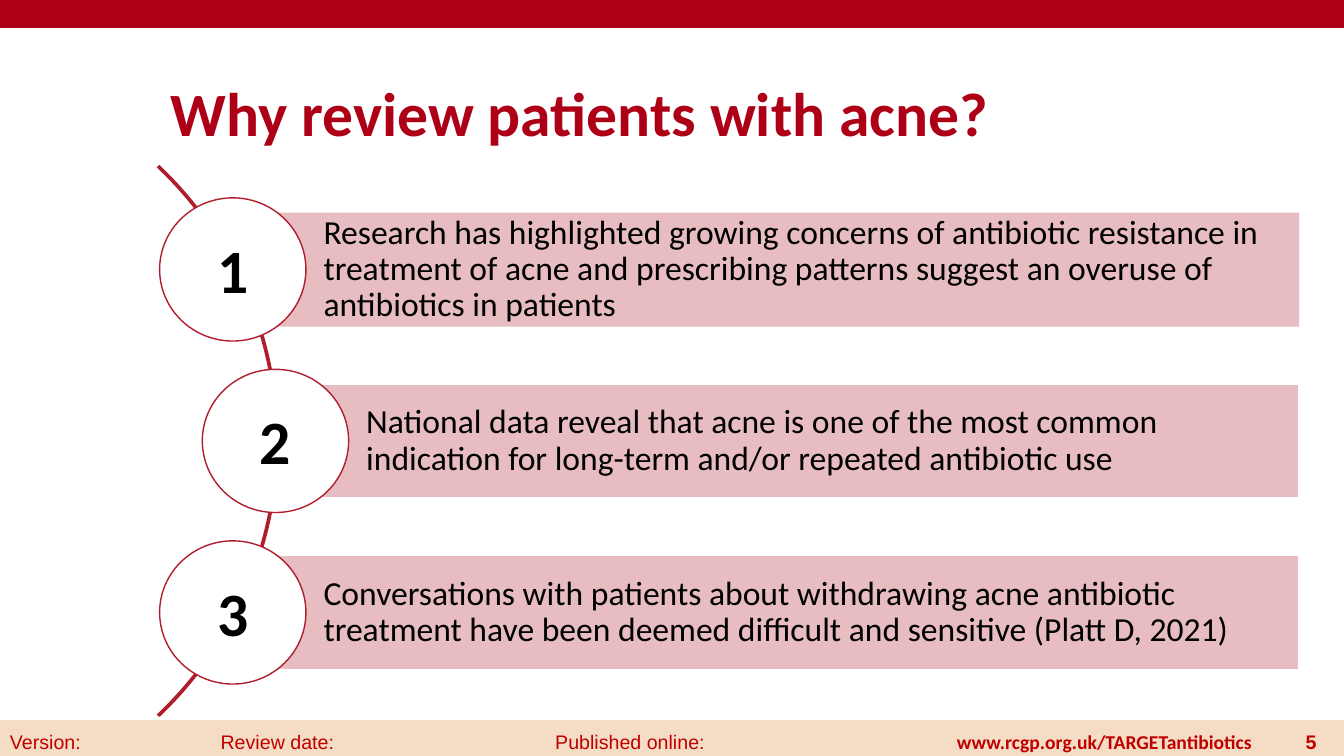
from lxml.etree import SubElement
from pptx import Presentation
from pptx.dml.color import RGBColor
from pptx.enum.shapes import MSO_SHAPE
from pptx.enum.text import MSO_ANCHOR, PP_ALIGN
from pptx.oxml.ns import qn
from pptx.util import Pt

COLOURS = {
    "title": "AD0016",
    "accent": "AF1E2C",
    "footer_band": "F4DDC4",
    "footer_text": "C00000",
    "white": "FFFFFF",
    "black": "000000",
}

REASONS = [
    "Research has highlighted growing concerns of antibiotic resistance in treatment of acne "
    "and prescribing patterns suggest an overuse of antibiotics in patients",
    "National data reveal that acne is one of the most common indication for long-term "
    "and/or repeated antibiotic use",
    "Conversations with patients about withdrawing acne antibiotic treatment have been "
    "deemed difficult and sensitive (Platt D, 2021)",
]


def colour(name):
    return RGBColor.from_string(COLOURS[name])


def write(shape, text, size=14, font="Calibri", color="black", bold=False,
          align=PP_ALIGN.LEFT, anchor=MSO_ANCHOR.TOP, spacing=1.0,
          insets=(7.2, 3.6, 7.2, 3.6)):
    frame = shape.text_frame
    frame.word_wrap = True
    frame.vertical_anchor = anchor
    (frame.margin_left, frame.margin_top,
     frame.margin_right, frame.margin_bottom) = map(Pt, insets)
    paragraph = frame.paragraphs[0]
    paragraph.alignment = align
    paragraph.line_spacing = spacing
    paragraph.space_before = Pt(0)
    run = paragraph.add_run()
    run.text = text
    run.font.size = Pt(size)
    run.font.name = font
    run.font.bold = bold
    run.font.color.rgb = colour(color)


class AcneSlide:
    """Holds the style and the current slide."""

    def __init__(self, presentation):
        self.slide = presentation.slides.add_slide(presentation.slide_layouts[5])

    def title(self, text, box):
        shape = self.slide.shapes.title
        shape.left, shape.top, shape.width, shape.height = map(Pt, box)
        write(shape, text, size=44, color="title", bold=True,
              anchor=MSO_ANCHOR.BOTTOM, spacing=0.9)

    def shape(self, kind, box, fill, line=None, alpha=None):
        shape = self.slide.shapes.add_shape(kind, *map(Pt, box))
        shape.shadow.inherit = False
        shape.fill.solid()
        shape.fill.fore_color.rgb = colour(fill)
        if alpha is not None:
            color_element = shape._element.spPr.find(qn("a:solidFill"))[0]
            SubElement(color_element, qn("a:alpha"), val=str(alpha * 1000))
        if line:
            shape.line.color.rgb = colour(line)
            shape.line.width = Pt(1)
        else:
            shape.line.fill.background()
        return shape

    def label(self, text, box, **style):
        write(self.slide.shapes.add_textbox(*map(Pt, box)), text, **style)

    def arc(self, box):
        arc = self.shape(MSO_SHAPE.BLOCK_ARC, box, "accent", "accent")
        for index, value in enumerate((189, 27, 0.003)):
            arc.adjustments[index] = value

    def reason(self, number, text, left, top, line):
        # Bar runs from the circle's centre to the common right edge
        bar_left, bar_right = left + 52.3, 928
        bar = self.shape(MSO_SHAPE.RECTANGLE, (bar_left, top + 10.6, bar_right - bar_left, 81.4),
                         "accent", line, alpha=29)
        write(bar, text, size=24, anchor=MSO_ANCHOR.MIDDLE, spacing=0.9,
              insets=(64.8, 5, 5, 5))
        self.shape(MSO_SHAPE.OVAL, (left, top, 104.5, 102.3), "white", "accent")
        self.label(str(number), (left + 33.9, top + 20.6, 36.7, 60.5), size=44, bold=True,
                   align=PP_ALIGN.CENTER, insets=(0, 3.6, 0, 3.6))


def main():
    presentation = Presentation()
    presentation.slide_width, presentation.slide_height = Pt(960), Pt(540)
    page = AcneSlide(presentation)

    # Top and footer bands
    page.shape(MSO_SHAPE.RECTANGLE, (0, 515, 960, 28.8), "footer_band", "footer_band")
    page.shape(MSO_SHAPE.RECTANGLE, (0, -0.7, 960, 20.2), "title", "title")

    # Footer texts
    footer = [
        ("www.rcgp.org.uk/TARGETantibiotics", 676.5, 231, "Calibri", True, PP_ALIGN.LEFT),
        ("5", 906, 41.5, "Arial", True, PP_ALIGN.RIGHT),
        ("Version:", 0, 70, "Arial", False, PP_ALIGN.LEFT),
        ("Review date:", 150.5, 119.5, "Arial", False, PP_ALIGN.LEFT),
        ("Published online:", 389.5, 127, "Arial", False, PP_ALIGN.LEFT),
    ]
    for text, left, width, font, bold, align in footer:
        page.label(text, (left, 517.7, width, 28.8), font=font, bold=bold,
                   align=align, color="footer_text")

    page.title("Why review patients with acne?", (114.5, 0, 732, 110.9))

    # Numbered reasons along the arc, the middle one set further right
    page.arc((-364.3, 40.3, 563, 549.4))
    for index, text in enumerate(REASONS):
        page.reason(index + 1, text, left=144.5 if index == 1 else 114,
                    top=141.3 + index * 122.5, line="white" if index else None)

    presentation.save("out.pptx")


if __name__ == "__main__":
    main()
